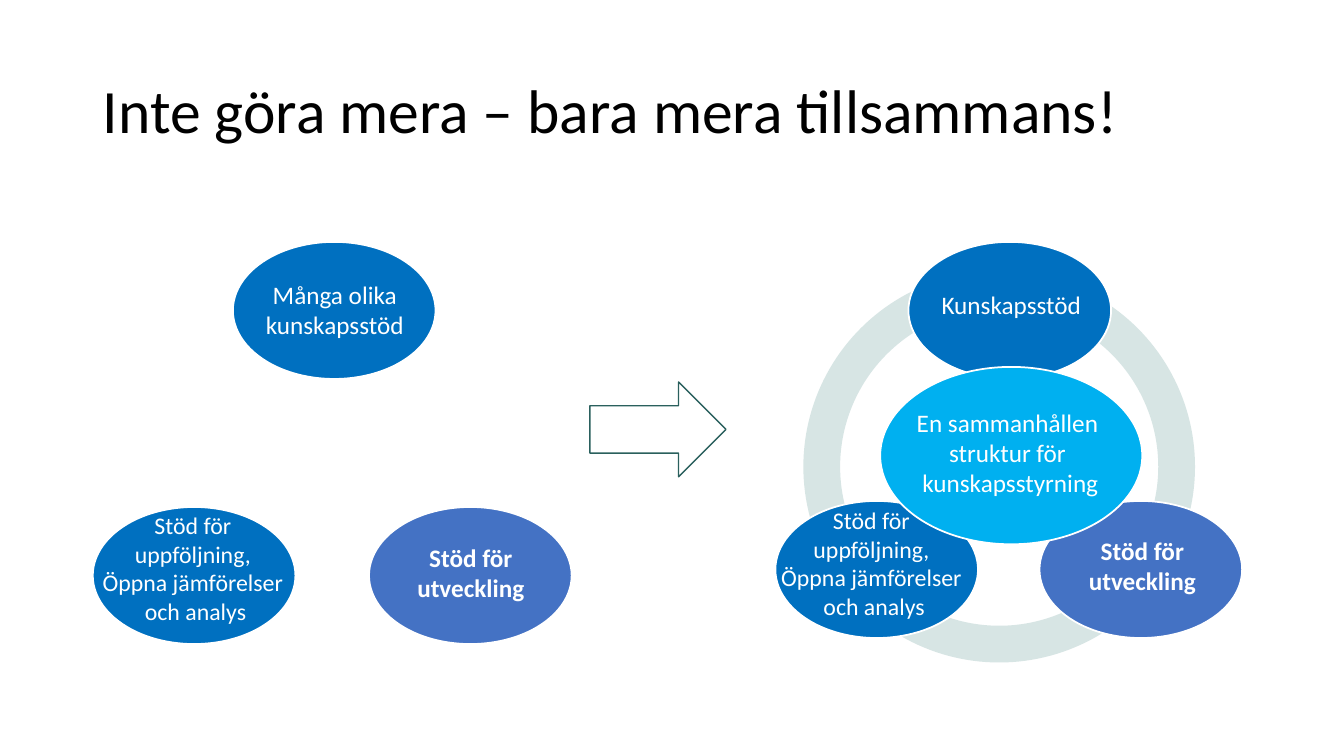
import pptx
import pptx.util
import pptx.dml.color
import pptx.enum.shapes
import pptx.enum.text
import pptx.oxml
import pptx.oxml.ns

COLOURS = {"black": "000000", "white": "FFFFFF", "blue": "0070C0", "indigo": "4472C4",
           "sky": "00B0F0", "ring": "377D7A", "arrow": "2A605D"}
Inches, Pt = pptx.util.Inches, pptx.util.Pt
Shape = pptx.enum.shapes.MSO_SHAPE
Align = pptx.enum.text.PP_ALIGN
Fit = pptx.enum.text.MSO_AUTO_SIZE

deck = pptx.Presentation()
deck.slide_width, deck.slide_height = Inches(13.33), Inches(7.5)
page = deck.slides.add_slide(deck.slide_layouts[5])


def rgb(name):
    return pptx.dml.color.RGBColor.from_string(COLOURS[name])


def write(frame, text, size=18, colour="white", bold=False, align=Align.CENTER, spacing=None):
    for index, line in enumerate(text.split("\n")):
        para = frame.add_paragraph() if index else frame.paragraphs[0]
        para.alignment, para.line_spacing = align, spacing
        span = para.add_run()
        span.text = line
        span.font.name, span.font.size, span.font.bold = "Calibri", Pt(size), bold
        span.font.color.rgb = rgb(colour)


# Title
title = page.shapes.title
title.left, title.top, title.width, title.height = map(Inches, (0.92, 0.4, 10.58, 1.45))
title.text_frame.vertical_anchor = pptx.enum.text.MSO_ANCHOR.MIDDLE
title.text_frame.auto_size = Fit.NONE
write(title.text_frame, "Inte göra mera – bara mera tillsammans!", size=44,
      colour="black", align=Align.LEFT, spacing=0.9)

# Ring, ellipses and arrow, from back to front
oval = (2.01, 1.36)
shapes = [
    (Shape.FLOWCHART_CONNECTOR, 8.15, 2.87, (3.52, 3.52), "white", "ring", 26.25),
    (Shape.OVAL, 9.01, 2.4, oval, "blue", "white", 1.25),
    (Shape.OVAL, 7.69, 4.97, oval, "blue", "white", 1.25),
    (Shape.OVAL, 10.31, 4.97, oval, "indigo", "white", 1.25),
    (Shape.OVAL, 8.73, 3.64, (2.6, 1.76), "sky", "white", 1.25),
    (Shape.OVAL, 2.31, 2.4, oval, "blue", "white", 1.25),
    (Shape.OVAL, 3.66, 5.03, oval, "indigo", "white", 1.25),
    (Shape.OVAL, 0.92, 5.03, oval, "blue", "white", 1.25),
    (Shape.RIGHT_ARROW, 5.85, 3.79, (1.35, 0.94), "white", "arrow", 1),
]
for kind, left, top, (width, height), fill, line, weight in shapes:
    shape = page.shapes.add_shape(kind, *map(Inches, (left, top, width, height)))
    shape.shadow.inherit = False
    shape.fill.solid()
    shape.fill.fore_color.rgb = rgb(fill)
    shape.line.color.rgb = rgb(line)
    shape.line.width = Pt(weight)
    if line == "ring":  # 20 % opaque
        tint = shape.line._get_or_add_ln().find(".//" + pptx.oxml.ns.qn("a:srgbClr"))
        alpha = pptx.oxml.parse_xml(f'<a:alpha {pptx.oxml.ns.nsdecls("a")} val="20000"/>')
        tint.append(alpha)

# Labels
follow_up = "Stöd för \nuppföljning, \nÖppna jämförelser \noch analys"
development = "Stöd för utveckling"
labels = [
    (9.23, 2.82, 1.6, 0.4, "Kunskapsstöd", {}),
    (10.59, 5.26, 1.48, 0.71, development, {"bold": True}),
    (7.64, 4.97, 2.06, 1.25, follow_up, {"size": 17}),
    (8.98, 3.99, 2.08, 1.01, "En sammanhållen \nstruktur för \nkunskapsstyrning", {}),
    (2.53, 2.72, 1.58, 0.71, "Många olika\nkunskapsstöd", {}),
    (3.93, 5.33, 1.48, 0.71, development, {"bold": True}),
    (0.91, 5.02, 2.06, 1.25, follow_up, {"size": 17}),
]
for left, top, width, height, text, style in labels:
    box = page.shapes.add_textbox(*map(Inches, (left, top, width, height)))
    box.text_frame.word_wrap = text == development
    box.text_frame.auto_size = Fit.SHAPE_TO_FIT_TEXT
    write(box.text_frame, text, **style)

deck.save("out.pptx")
